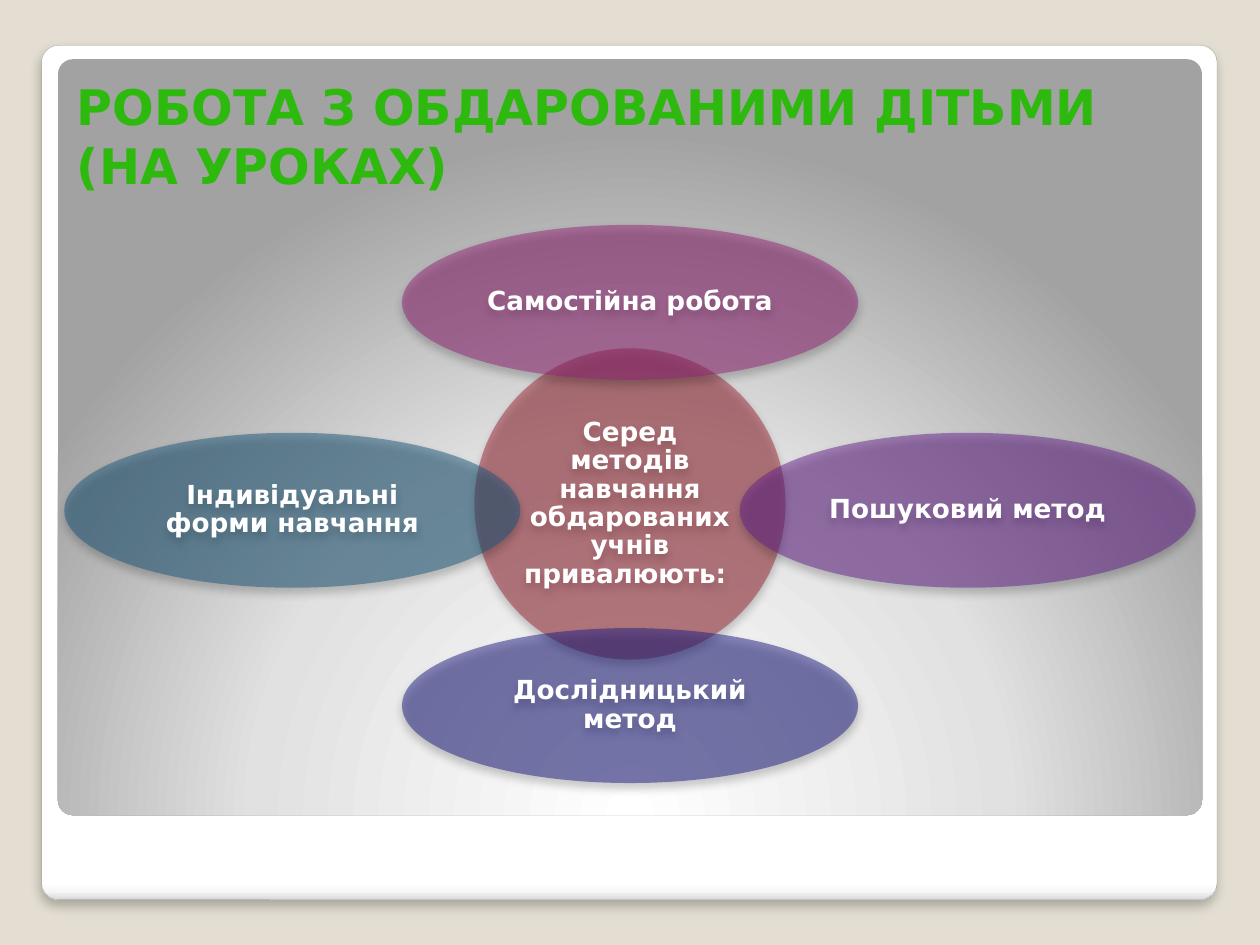
from dataclasses import dataclass

from lxml.etree import SubElement
from pptx import Presentation
from pptx.dml.color import RGBColor
from pptx.enum.shapes import MSO_SHAPE
from pptx.enum.text import MSO_ANCHOR, PP_ALIGN
from pptx.oxml import parse_xml
from pptx.oxml.ns import nsdecls, qn
from pptx.util import Inches, Pt


@dataclass(frozen=True)
class Theme:
    """Hold the colours, font and type sizes of the slide."""
    background: str = "E3DED1"
    frame_line: str = "A4A4A4"
    title: str = "2DB90E"
    text: str = "FFFFFF"
    hub: str = "9F2936"
    top: str = "962579"
    right: str = "66228E"
    bottom: str = "1E1E85"
    left: str = "1B587C"
    font: str = "DejaVu Sans"
    title_size: int = 28
    label_size: int = 15


THEME = Theme()
FRAME_STOPS = [(0, "FFFFFF"), (98, "FFFFFF"), (99, "F7F7F7"), (100, "DADADA")]
PANEL_STOPS = [(0, "FFFFFF"), (55, "E1E1E1"), (100, "A2A2A2")]
LINEAR_DOWN = '<a:lin ang="5400000" scaled="0"/>'
RADIAL_BELOW = ('<a:path path="circle"><a:fillToRect l="50000" t="175000" '
                'r="50000" b="-75000"/></a:path>')
CENTER_X, CENTER_Y = 5, 4
HUB_SIZE = 2.47
PETAL_WIDTH, PETAL_HEIGHT = 3.62, 1.23
REACH_X, REACH_Y = 2.68, 1.6
PETAL_CENTER_Y = 4.05


def add_shadow(shape, opacity, blur, distance):
    """Give a shape a soft black shadow that falls straight down."""
    shape.shadow.inherit = False
    effects = shape.element.spPr.find(qn("a:effectLst"))
    shadow = SubElement(effects, qn("a:outerShdw"), blurRad=str(Pt(blur)),
                        dist=str(Pt(distance)), dir="5400000",
                        algn="ctr", rotWithShape="0")
    color = SubElement(shadow, qn("a:srgbClr"), val="000000")
    SubElement(color, qn("a:alpha"), val=str(opacity * 1000))


def add_run(paragraph, text, size, color):
    """Add one bold run of text to a paragraph."""
    run = paragraph.add_run()
    run.text = text
    run.font.name = THEME.font
    run.font.size = Pt(size)
    run.font.bold = True
    run.font.color.rgb = RGBColor.from_string(color)


def add_panel(slide, box, stops, direction):
    """Add a rounded gradient panel behind the title."""
    panel = slide.shapes.add_shape(MSO_SHAPE.ROUNDED_RECTANGLE,
                                   *map(Inches, box))
    panel.adjustments[0] = 0.02
    panel.shadow.inherit = False
    panel.line.fill.background()
    stop_list = "".join(
        f'<a:gs pos="{position * 1000}"><a:srgbClr val="{color}"/></a:gs>'
        for position, color in stops)
    gradient = parse_xml(f'<a:gradFill {nsdecls("a")} rotWithShape="1">'
                         f'<a:gsLst>{stop_list}</a:gsLst>{direction}</a:gradFill>')
    panel.element.spPr.find(qn("a:prstGeom")).addnext(gradient)
    slide.shapes.title.element.addprevious(panel.element)
    return panel


def add_title(slide, text):
    """Place and format the title placeholder."""
    title = slide.shapes.title
    title.left, title.top = Inches(0.51), Inches(0.44)
    title.width, title.height = Inches(8.95), Inches(1.15)
    title.text_frame.vertical_anchor = MSO_ANCHOR.BOTTOM
    paragraph = title.text_frame.paragraphs[0]
    paragraph.alignment = PP_ALIGN.LEFT
    add_run(paragraph, text, THEME.title_size, THEME.title)


def add_ellipse(group, center_x, center_y, width, height, color, text):
    """Add a half-transparent ellipse with a centred label."""
    ellipse = group.shapes.add_shape(
        MSO_SHAPE.OVAL, Inches(center_x - width / 2),
        Inches(center_y - height / 2), Inches(width), Inches(height))
    ellipse.fill.solid()
    ellipse.fill.fore_color.rgb = RGBColor.from_string(color)
    fill_color = ellipse.element.spPr.find(qn("a:solidFill")).find(qn("a:srgbClr"))
    SubElement(fill_color, qn("a:alpha"), val="50000")
    ellipse.line.fill.background()
    add_shadow(ellipse, 40, 5.2, 3)
    frame = ellipse.text_frame
    frame.word_wrap = True
    frame.vertical_anchor = MSO_ANCHOR.MIDDLE
    frame.margin_left = frame.margin_right = Inches(0.02)
    frame.margin_top = frame.margin_bottom = Inches(0.02)
    paragraph = frame.paragraphs[0]
    paragraph.alignment = PP_ALIGN.CENTER
    paragraph.line_spacing = 0.9
    paragraph.space_after = Pt(5.25)
    add_run(paragraph, text, THEME.label_size, THEME.text)


def add_methods(slide):
    """Add the hub and the four methods around it as one group."""
    group = slide.shapes.add_group_shape()
    add_ellipse(group, CENTER_X, CENTER_Y, HUB_SIZE, HUB_SIZE, THEME.hub,
                "Серед методів навчання обдарованих учнів привалюють: ")
    petals = [
        (0, -1, THEME.top, "Самостійна робота"),
        (1, 0, THEME.right, "Пошуковий метод"),
        (0, 1, THEME.bottom, "Дослідницький метод"),
        (-1, 0, THEME.left, "Індивідуальні форми навчання"),
    ]
    for step_x, step_y, color, text in petals:
        add_ellipse(group, CENTER_X + step_x * REACH_X,
                    PETAL_CENTER_Y - 0.05 * abs(step_y) + step_y * REACH_Y,
                    PETAL_WIDTH, PETAL_HEIGHT, color, text)


def main():
    """Build the slide and save the presentation."""
    presentation = Presentation()
    presentation.slide_width = Inches(10)
    presentation.slide_height = Inches(7.5)
    slide = presentation.slides.add_slide(presentation.slide_layouts[5])
    slide.background.fill.solid()
    slide.background.fill.fore_color.rgb = RGBColor.from_string(THEME.background)
    frame = add_panel(slide, (0.33, 0.36, 9.33, 6.78), FRAME_STOPS, LINEAR_DOWN)
    frame.line.color.rgb = RGBColor.from_string(THEME.frame_line)
    frame.line.width = Pt(0.16)
    add_shadow(frame, 25, 6, 4)
    add_panel(slide, (0.46, 0.47, 9.08, 6), PANEL_STOPS, RADIAL_BELOW)
    add_title(slide, "РОБОТА З ОБДАРОВАНИМИ ДІТЬМИ (НА УРОКАХ)")
    add_methods(slide)
    presentation.save("out.pptx")


if __name__ == "__main__":
    main()
